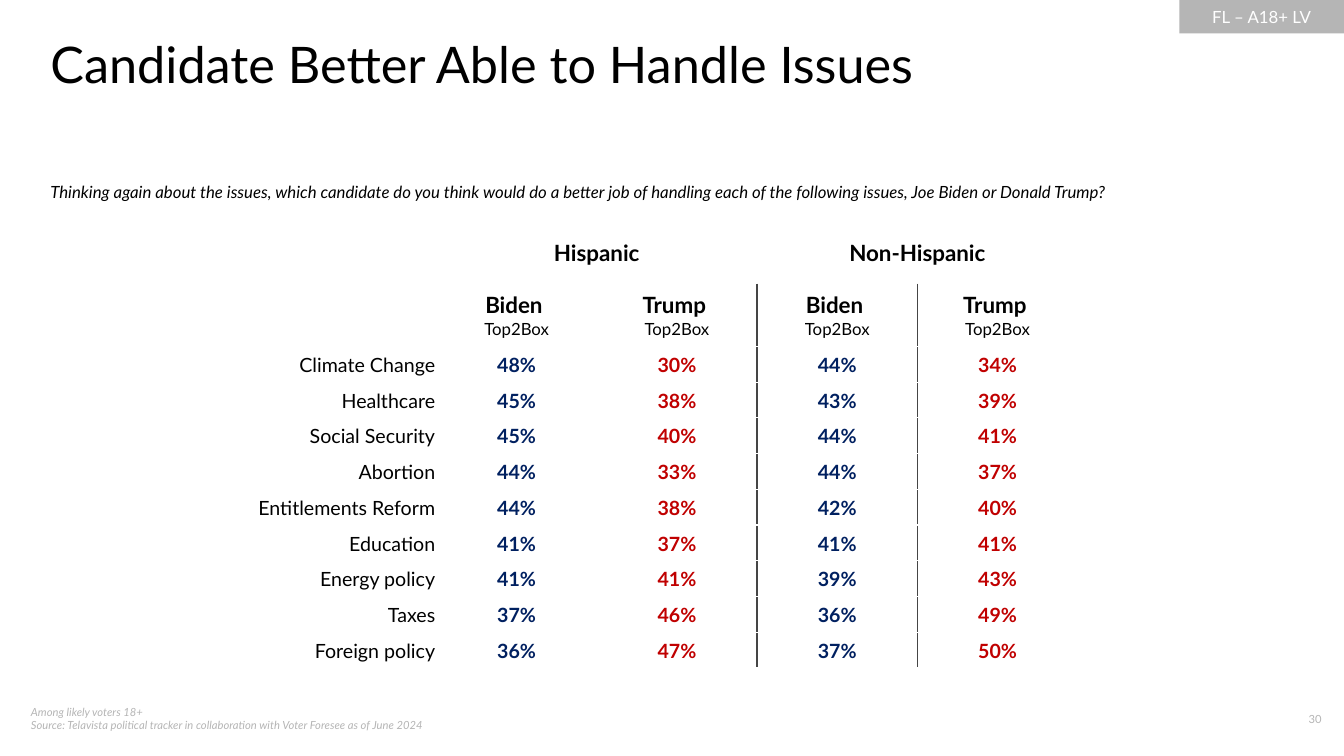
from dataclasses import dataclass

from lxml import etree
from pptx import Presentation, util as u
from pptx.dml.color import RGBColor
from pptx.enum import shapes, text
from pptx.oxml.ns import qn

LEFT, CENTER, RIGHT = text.PP_ALIGN.LEFT, text.PP_ALIGN.CENTER, text.PP_ALIGN.RIGHT


@dataclass(frozen=True)
class Theme:
    font: str = "Lato"
    ink: str = "000000"
    paper: str = "FFFFFF"
    muted: str = "B5B5B5"
    divider: str = "454545"
    biden: str = "002060"
    trump: str = "C00000"
    title: int = 36
    heading: int = 16
    body: int = 14
    small: int = 12
    note: int = 8


class SlideBuilder:
    def __init__(self, slide, theme):
        self.slide = slide
        self.theme = theme

    def style(self, paragraph, size, color, align=LEFT, bold=False, italic=False):
        paragraph.alignment = align
        for run in paragraph.runs:
            run.font.name = self.theme.font
            run.font.size = u.Pt(size)
            run.font.bold = bold
            run.font.italic = italic
            run.font.color.rgb = RGBColor.from_string(color)

    def badge(self, box, label):
        shape = self.slide.shapes.add_shape(
            shapes.MSO_SHAPE.RECTANGLE, *map(u.Cm, box))
        shape.shadow.inherit = False
        shape.fill.solid()
        shape.fill.fore_color.rgb = RGBColor.from_string(self.theme.muted)
        shape.line.fill.background()
        shape.text_frame.text = label
        shape.text_frame.vertical_anchor = text.MSO_ANCHOR.MIDDLE
        self.style(shape.text_frame.paragraphs[0], self.theme.small, self.theme.paper, CENTER)

    def text_box(self, box, content, size, color, inset=True, **styling):
        frame = self.slide.shapes.add_textbox(*map(u.Cm, box)).text_frame
        frame.word_wrap = True
        if not inset:
            frame.margin_left = frame.margin_right = 0
            frame.margin_top = frame.margin_bottom = 0
        frame.text = content
        self.style(frame.paragraphs[0], size, color, **styling)

    def table(self, left, top, widths, heights):
        table = self.slide.shapes.add_table(
            len(heights), len(widths), u.Cm(left), u.Cm(top),
            u.Cm(sum(widths)), u.Cm(sum(heights))).table
        table.first_row = table.horz_banding = False
        for column, width in zip(table.columns, widths):
            column.width = u.Cm(width)
        for row, height in zip(table.rows, heights):
            row.height = u.Cm(height)
        for cell in table.iter_cells():
            cell.fill.background()
            cell.vertical_anchor = text.MSO_ANCHOR.MIDDLE
        return table

    def heading_cell(self, cell, heading, caption=None):
        cell.text_frame.text = heading
        self.style(cell.text_frame.paragraphs[0], self.theme.heading,
                   self.theme.ink, CENTER, bold=True)
        if caption:
            paragraph = cell.text_frame.add_paragraph()
            paragraph.text = caption
            self.style(paragraph, self.theme.small, self.theme.ink, CENTER)

    def body_cell(self, cell, content, color, align, bold):
        cell.margin_left = cell.margin_right = cell.margin_top = u.Cm(0.03)
        cell.margin_bottom = 0
        cell.text_frame.text = content
        self.style(cell.text_frame.paragraphs[0], self.theme.body, color, align, bold)

    def border(self, cell, side):
        line = etree.Element(qn(f"a:{side}"), w=str(u.Pt(1.5)))
        fill = etree.SubElement(line, qn("a:solidFill"))
        etree.SubElement(fill, qn("a:srgbClr"), val=self.theme.divider)
        cell._tc.get_or_add_tcPr().insert(0, line)


ISSUES = [
    ("Climate Change", 48, 30, 44, 34),
    ("Healthcare", 45, 38, 43, 39),
    ("Social Security", 45, 40, 44, 41),
    ("Abortion", 44, 33, 44, 37),
    ("Entitlements Reform", 44, 38, 42, 40),
    ("Education", 41, 37, 41, 41),
    ("Energy policy", 41, 41, 39, 43),
    ("Taxes", 37, 46, 36, 49),
    ("Foreign policy", 36, 47, 37, 50),
]


def add_issue_table(builder):
    theme = builder.theme
    table = builder.table(5.92, 5.59, [5.08] + [4.04] * 4,
                          [1.57] * 2 + [0.9] * len(ISSUES))
    for column, group in ((1, "Hispanic"), (3, "Non-Hispanic")):
        table.cell(0, column).merge(table.cell(0, column + 1))
        builder.heading_cell(table.cell(0, column), group)
    candidates = [("Biden ", theme.biden), ("Trump ", theme.trump)] * 2
    for column, (name, color) in enumerate(candidates, 1):
        builder.heading_cell(table.cell(1, column), name, "Top2Box")
        for row, issue in enumerate(ISSUES, 2):
            builder.body_cell(table.cell(row, column), f"{issue[column]}%",
                              color, CENTER, True)
    for row, issue in enumerate(ISSUES, 2):
        builder.body_cell(table.cell(row, 0), issue[0], theme.ink, RIGHT, False)
    for row in range(1, len(table.rows)):
        builder.border(table.cell(row, 2), "lnR")
        builder.border(table.cell(row, 3), "lnL")


def main():
    presentation = Presentation()
    presentation.slide_width = u.Cm(33.87)
    presentation.slide_height = u.Cm(19.05)
    slide = presentation.slides.add_slide(presentation.slide_layouts[6])
    theme = Theme()
    builder = SlideBuilder(slide, theme)

    builder.badge((29.72, 0, 4.15, 0.84), "FL – A18+ LV")
    builder.text_box(
        (0.53, 17.65, 12.98, 1.02),
        "Among likely voters 18+\vSource: Telavista political tracker in "
        "collaboration with Voter Foresee as of June 2024",
        theme.note, theme.muted, italic=True)
    builder.text_box((31.32, 17.83, 2.24, 0.69), "30", theme.note, theme.muted, align=RIGHT)
    builder.text_box((1.27, 0.84, 30.48, 1.55), "Candidate Better Able to Handle Issues",
                     theme.title, theme.ink, inset=False)
    builder.text_box(
        (1.27, 4.57, 27.97, 0.51),
        "Thinking again about the issues, which candidate do you think would do a better "
        "job of handling each of the following issues, Joe Biden or Donald Trump?",
        theme.small, theme.ink, inset=False, italic=True)
    add_issue_table(builder)
    presentation.save("out.pptx")


if __name__ == "__main__":
    main()
